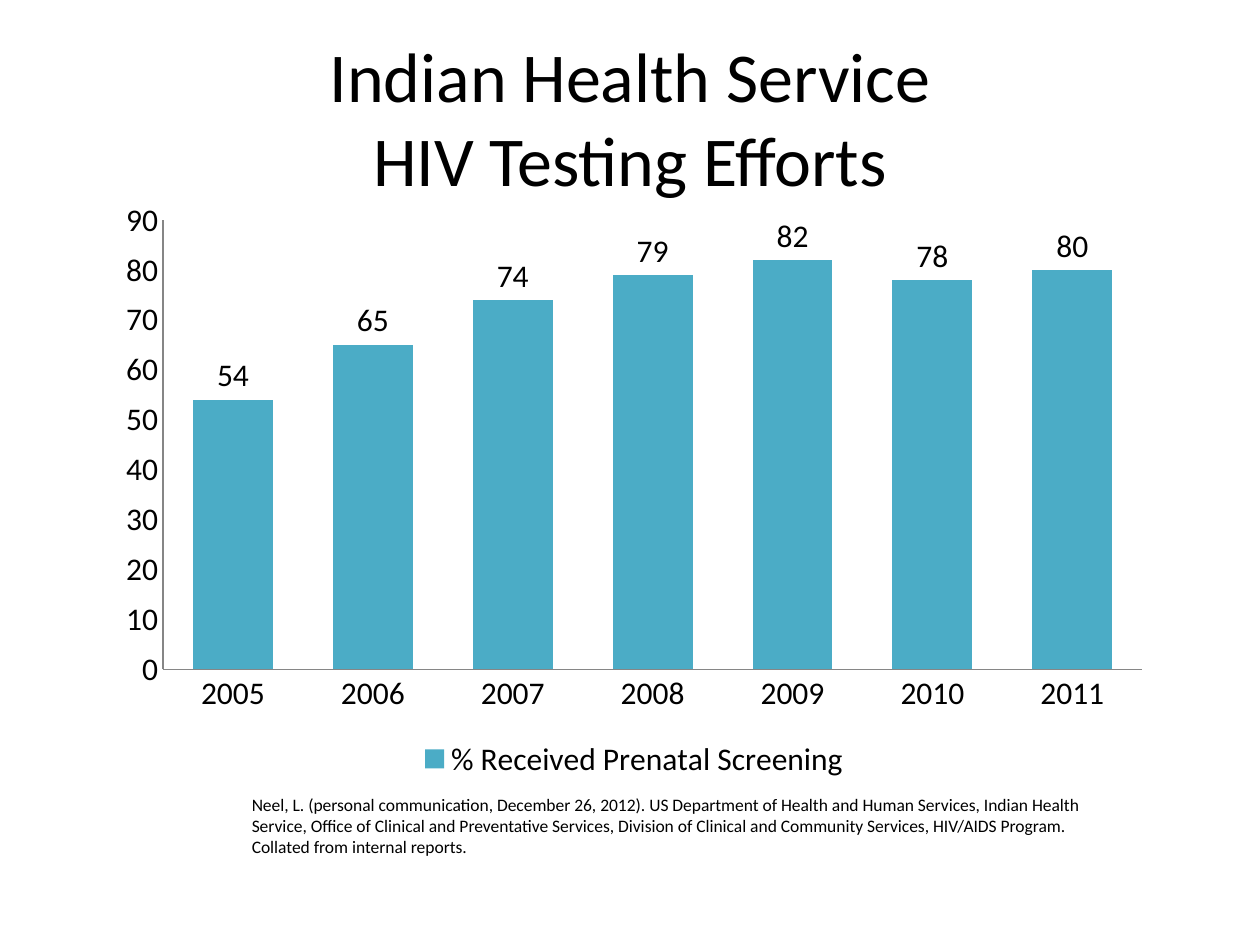
from lxml.etree import SubElement
from pptx import Presentation
from pptx.chart.data import CategoryChartData
from pptx.dml.color import RGBColor
from pptx.enum.chart import XL_CHART_TYPE, XL_LABEL_POSITION, XL_LEGEND_POSITION, XL_TICK_MARK
from pptx.enum.text import MSO_ANCHOR, PP_ALIGN
from pptx.oxml.ns import qn
from pptx.util import Inches, Pt

BLACK = RGBColor(0x00, 0x00, 0x00)
TEAL = RGBColor(0x4B, 0xAC, 0xC6)
AXIS_GRAY = RGBColor(0x86, 0x86, 0x86)
FONT = "Calibri"
SLIDE_WIDTH, SLIDE_HEIGHT = Inches(10), Inches(7.5)

TITLE_LINES = ["Indian Health Service", "HIV Testing Efforts"]
SCREENING_BY_YEAR = {
    "2005": 54, "2006": 65, "2007": 74, "2008": 79,
    "2009": 82, "2010": 78, "2011": 80,
}
CITATION = (
    "Neel, L. (personal communication, December 26, 2012). US Department of "
    "Health and Human Services, Indian Health Service, Office of Clinical and "
    "Preventative Services, Division of Clinical and Community Services, "
    "HIV/AIDS Program. Collated from internal reports."
)


def share_box(left, top, width, height):
    return (int(left * SLIDE_WIDTH), int(top * SLIDE_HEIGHT),
            int(width * SLIDE_WIDTH), int(height * SLIDE_HEIGHT))


def style_font(font, size):
    font.name = FONT
    font.size = Pt(size)
    font.color.rgb = BLACK


def place_title(slide, box):
    title = slide.shapes.title
    title.left, title.top, title.width, title.height = box
    title.text_frame.vertical_anchor = MSO_ANCHOR.MIDDLE
    heading = title.text_frame.paragraphs[0]
    heading.alignment = PP_ALIGN.CENTER
    for index, line in enumerate(TITLE_LINES):
        if index:
            heading.add_line_break()
        run = heading.add_run()
        run.text = line
        style_font(run.font, 40)


def place_screening_chart(slide, box):
    screening = CategoryChartData()
    screening.categories = list(SCREENING_BY_YEAR)
    screening.add_series("% Received Prenatal Screening", SCREENING_BY_YEAR.values())
    chart = slide.shapes.add_chart(XL_CHART_TYPE.COLUMN_CLUSTERED, *box, screening).chart
    style_font(chart.font, 18)
    chart.has_title = False
    chart.has_legend = True
    chart.legend.position = XL_LEGEND_POSITION.BOTTOM
    chart.legend.include_in_layout = False

    for axis in (chart.category_axis, chart.value_axis):
        axis.major_tick_mark = axis.minor_tick_mark = XL_TICK_MARK.NONE
        axis.has_major_gridlines = False
        axis.format.line.color.rgb = AXIS_GRAY
        axis.format.line.width = Pt(0.75)
    chart.value_axis.minimum_scale = 0
    chart.value_axis.maximum_scale = 90
    chart.value_axis.major_unit = 10

    columns = chart.plots[0]
    columns.gap_width = 75
    columns.vary_by_categories = False
    columns.has_data_labels = True
    columns.data_labels.show_value = True
    columns.data_labels.position = XL_LABEL_POSITION.OUTSIDE_END
    style_font(columns.data_labels.font, 18)
    fill = columns.series[0].format.fill
    fill.solid()
    fill.fore_color.rgb = TEAL


def place_citation(slide, box):
    frame = slide.shapes.add_textbox(*box).text_frame
    frame.word_wrap = True
    SubElement(frame._txBody.bodyPr, qn("a:spAutoFit"))
    run = frame.paragraphs[0].add_run()
    run.text = CITATION
    style_font(run.font, 10)


def main():
    deck = Presentation()
    deck.slide_width, deck.slide_height = SLIDE_WIDTH, SLIDE_HEIGHT
    slide = deck.slides.add_slide(deck.slide_layouts[5])
    place_title(slide, share_box(0.025, 0.04, 0.95, 1 / 6))
    place_screening_chart(slide, share_box(1 / 12, 0.2, 0.84, 0.63))
    place_citation(slide, share_box(0.19, 5 / 6, 0.71, 0.08))
    deck.save("out.pptx")


if __name__ == "__main__":
    main()
